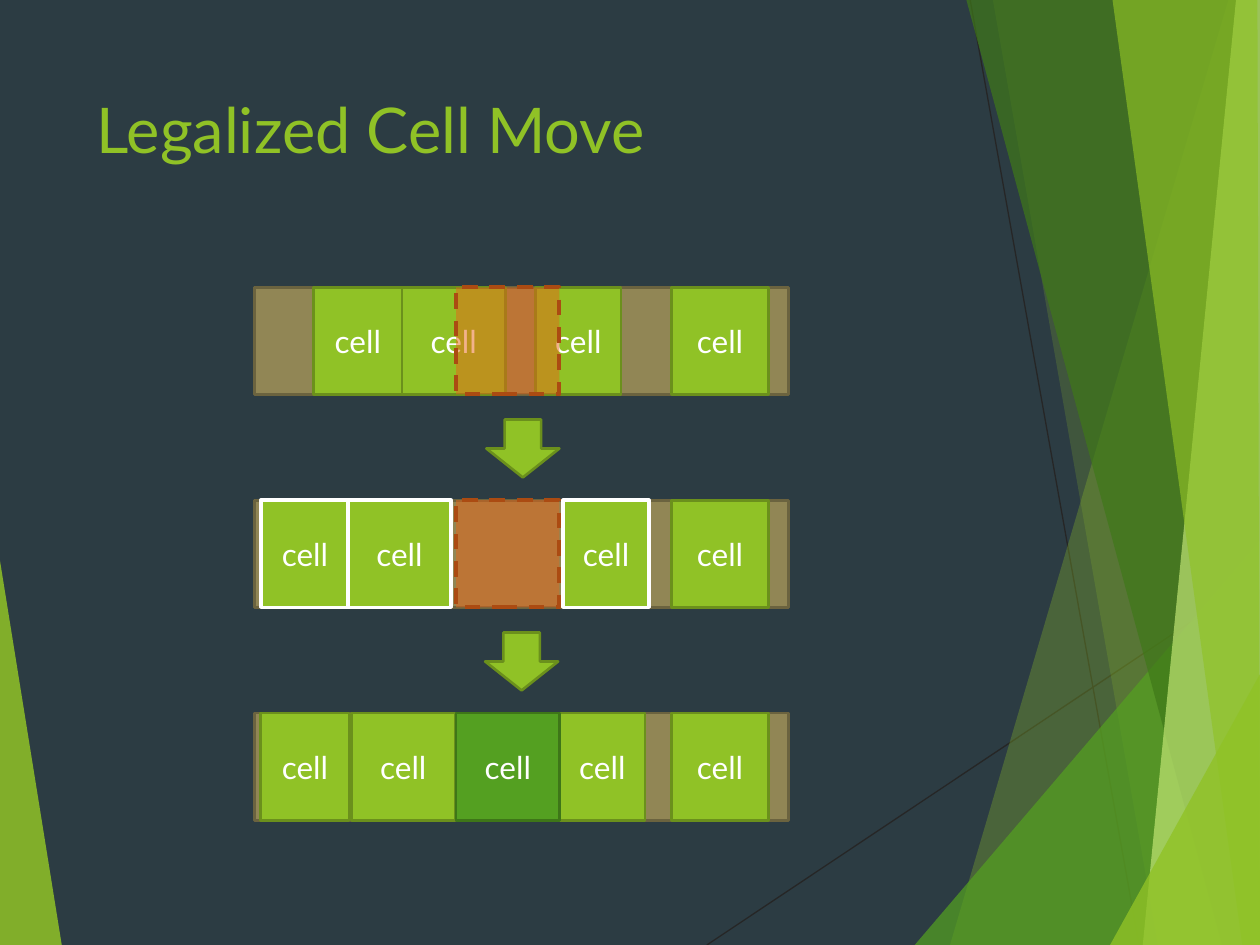
from lxml import etree
from pptx import Presentation
from pptx.dml.color import RGBColor
from pptx.enum.dml import MSO_LINE
from pptx.enum.shapes import MSO_CONNECTOR, MSO_SHAPE
from pptx.enum.text import MSO_ANCHOR, PP_ALIGN
from pptx.oxml.ns import qn
from pptx.util import Inches, Pt

RECTANGLE, DOWN_ARROW = MSO_SHAPE.RECTANGLE, MSO_SHAPE.DOWN_ARROW
STRAIGHT = MSO_CONNECTOR.STRAIGHT
DASH = MSO_LINE.DASH
TOP, MIDDLE = MSO_ANCHOR.TOP, MSO_ANCHOR.MIDDLE
LEFT, CENTER = PP_ALIGN.LEFT, PP_ALIGN.CENTER

SLATE = RGBColor(0x2C, 0x3C, 0x43)
CHARCOAL = RGBColor(0x26, 0x26, 0x26)
WHITE = RGBColor(0xFF, 0xFF, 0xFF)
LIME = RGBColor(0x90, 0xC2, 0x26)
LIME_EDGE = RGBColor(0x6B, 0x90, 0x1C)
PALE_LIME = RGBColor(0xC0, 0xE4, 0x74)
GREEN = RGBColor(0x54, 0xA0, 0x21)
GREEN_EDGE = RGBColor(0x3E, 0x76, 0x18)
FOREST = RGBColor(0x3F, 0x78, 0x19)
KHAKI = RGBColor(0x91, 0x86, 0x55)
KHAKI_EDGE = RGBColor(0x6B, 0x63, 0x3F)
ORANGE = RGBColor(0xE7, 0x66, 0x18)
ORANGE_EDGE = RGBColor(0xAB, 0x4B, 0x12)

WIDTH, HEIGHT = 10, 7.5
RAYS = [((5.61, HEIGHT), (WIDTH, 4.57)), ((7.7, 0), (9.04, HEIGHT))]
FACETS = [
    ([(0, 4.45), (0.49, HEIGHT), (0, HEIGHT)], LIME, 85),
    ([(9.75, 0), (7.54, HEIGHT), (WIDTH, HEIGHT), (WIDTH, 0)], LIME, 30),
    ([(7.88, 0), (9.19, HEIGHT), (WIDTH, HEIGHT), (WIDTH, 0)], LIME, 20),
    ([(7.26, HEIGHT), (WIDTH, 4.29), (WIDTH, HEIGHT)], GREEN, 72),
    ([(7.67, 0), (9.7, HEIGHT), (WIDTH, HEIGHT), (WIDTH, 0)], FOREST, 70),
    ([(9.81, 0), (9.07, HEIGHT), (WIDTH, HEIGHT), (WIDTH, 0)], PALE_LIME, 70),
    ([(8.83, 0), (9.86, HEIGHT), (WIDTH, HEIGHT), (9.98, 0)], LIME, 65),
    ([(8.81, HEIGHT), (WIDTH, 5.35), (WIDTH, HEIGHT)], LIME, 80),
]

PLACED = {"fill": LIME, "edge": LIME_EDGE, "label": "cell"}
SHIFTED = {"fill": LIME, "edge": WHITE, "weight": 2, "label": "cell"}
INSERTED = {"fill": GREEN, "edge": GREEN_EDGE, "label": "cell"}
TARGET = {"fill": ORANGE, "edge": ORANGE_EDGE, "weight": 2.25, "opacity": 50, "dash": DASH}

ROW_LEFT, ROW_TOP, ROW_WIDTH, ROW_HEIGHT, ROW_PITCH = 2.02, 2.28, 4.24, 0.85, 1.69
CELL_WIDTHS = (0.7, 0.82, 0.68, 0.77, 0.82)
STAGES = [
    ((2.49, 3.19, 4.25, 5.33, 3.62), (PLACED, PLACED, PLACED, PLACED, TARGET)),
    ((2.07, 2.76, 4.47, 5.33, 3.62), (SHIFTED, SHIFTED, SHIFTED, PLACED, TARGET)),
    ((2.07, 2.79, 4.44, 5.33, 3.62), (PLACED, PLACED, PLACED, PLACED, INSERTED)),
]
ARROW_LEFTS = (3.86, 3.85)


def set_opacity(shape, percent):
    """Make the solid fill of a shape partly transparent."""
    color = shape.fill._xPr.find(qn("a:solidFill"))[0]
    etree.SubElement(color, qn("a:alpha")).set("val", str(percent * 1000))


def write(shape, text, size, color, align, anchor):
    """Write one line of text in a shape."""
    frame = shape.text_frame
    frame.word_wrap = True
    frame.vertical_anchor = anchor
    paragraph = frame.paragraphs[0]
    paragraph.alignment = align
    run = paragraph.add_run()
    run.text = text
    for name, value in {"name": "Lato", "size": Pt(size)}.items():
        setattr(run.font, name, value)
    run.font.color.rgb = color


def add_block(slide, kind, box, fill, edge, weight=1.5, opacity=100, dash=None, label=None):
    """Add an outlined preset shape with an optional label."""
    block = slide.shapes.add_shape(kind, *map(Inches, box))
    block.shadow.inherit = False
    block.fill.solid()
    block.fill.fore_color.rgb = fill
    if opacity < 100:
        set_opacity(block, opacity)
    block.line.color.rgb = edge
    for name, value in {"width": Pt(weight), "dash_style": dash}.items():
        setattr(block.line, name, value)
    if label:
        write(block, label, 18, WHITE, CENTER, MIDDLE)


def add_backdrop(slide):
    """Draw the dark ground, thin rays and translucent facets."""
    slide.background.fill.solid()
    slide.background.fill.fore_color.rgb = SLATE
    for start, end in RAYS:
        ray = slide.shapes.add_connector(STRAIGHT, *map(Inches, start + end))
        ray.line.color.rgb = CHARCOAL
        ray.line.width = Pt(0.75)
        etree.SubElement(ray._element.spPr, qn("a:effectLst"))
    for corners, color, opacity in FACETS:
        points = [(Inches(x), Inches(y)) for x, y in corners]
        outline = slide.shapes.build_freeform(*points[0])
        outline.add_line_segments(points[1:], close=True)
        facet = outline.convert_to_shape()
        facet.shadow.inherit = False
        facet.fill.solid()
        facet.fill.fore_color.rgb = color
        set_opacity(facet, opacity)
        facet.line.fill.background()


def add_title(slide, box):
    """Place the slide title."""
    title = slide.shapes.add_textbox(*map(Inches, box))
    write(title, "Legalized Cell Move", 36, LIME, LEFT, TOP)


def add_row(slide, box, lefts, styles):
    """Draw a placement row and the cells on it."""
    _, top, _, height = box
    add_block(slide, RECTANGLE, box, KHAKI, KHAKI_EDGE)
    for left, width, style in zip(lefts, CELL_WIDTHS, styles):
        add_block(slide, RECTANGLE, (left, top, width, height), **style)


def main():
    """Build and save the slide."""
    deck = Presentation()
    deck.slide_width, deck.slide_height = Inches(WIDTH), Inches(HEIGHT)
    slide = deck.slides.add_slide(deck.slide_layouts[6])
    add_backdrop(slide)
    add_title(slide, (0.67, 0.67, 6.94, 1.44))
    for index, (lefts, styles) in enumerate(STAGES):
        top = ROW_TOP + index * ROW_PITCH
        add_row(slide, (ROW_LEFT, top, ROW_WIDTH, ROW_HEIGHT), lefts, styles)
    for index, left in enumerate(ARROW_LEFTS):
        top = ROW_TOP + index * ROW_PITCH + 1.05
        add_block(slide, DOWN_ARROW, (left, top, 0.58, 0.46), LIME, LIME_EDGE)
    deck.save("out.pptx")


if __name__ == "__main__":
    main()
